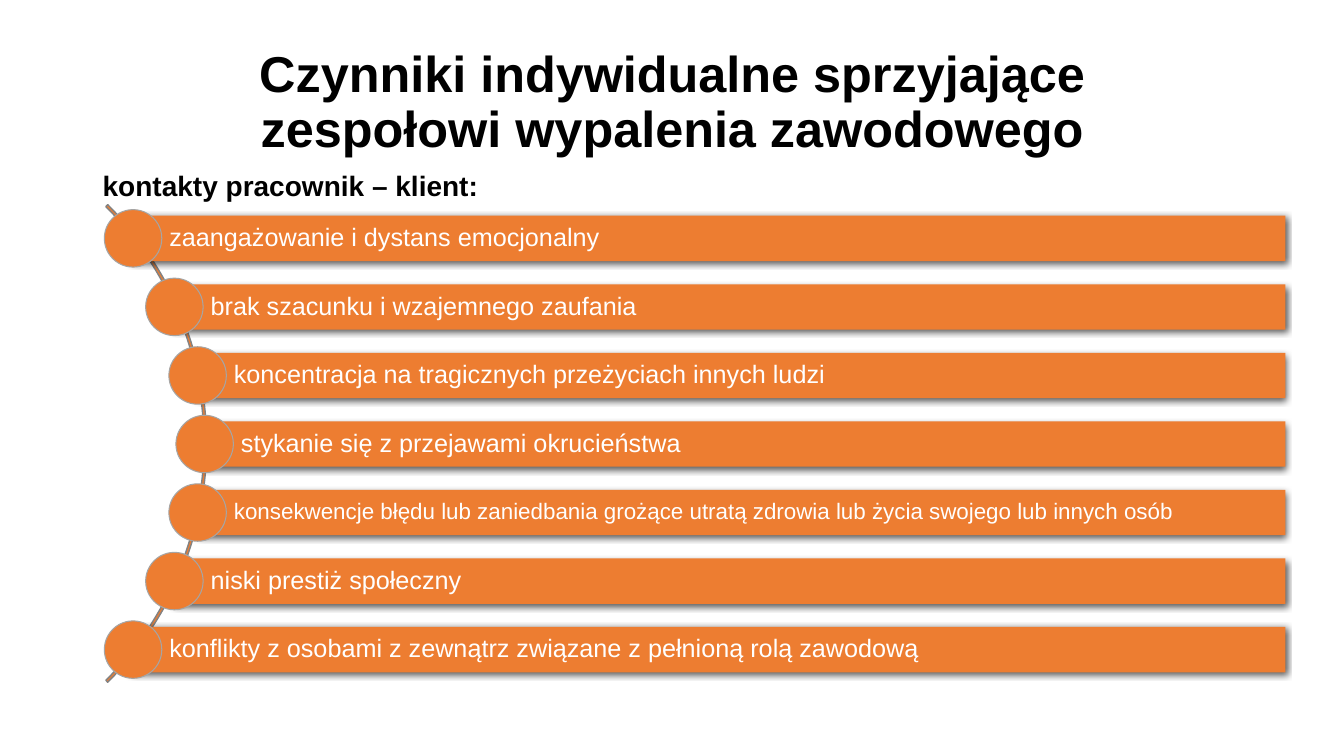
from lxml import etree
from pptx import Presentation
from pptx.dml.color import RGBColor
from pptx.enum.shapes import MSO_SHAPE
from pptx.enum.text import MSO_ANCHOR, PP_ALIGN
from pptx.oxml import parse_xml
from pptx.util import Inches, Pt

ARC, BAR, CIRCLE = MSO_SHAPE.BLOCK_ARC, MSO_SHAPE.RECTANGLE, MSO_SHAPE.OVAL
LEFT, CENTER = PP_ALIGN.LEFT, PP_ALIGN.CENTER
TOP, MIDDLE = MSO_ANCHOR.TOP, MSO_ANCHOR.MIDDLE
ORANGE, WHITE, BLACK = "ED7D31", "FFFFFF", "000000"

BAR_SHADOW = """
<a:effectLst xmlns:a="http://schemas.openxmlformats.org/drawingml/2006/main">
  <a:outerShdw blurRad="57150" dist="19050" dir="5400000" algn="ctr" rotWithShape="0">
    <a:srgbClr val="000000"><a:alpha val="63000"/></a:srgbClr>
  </a:outerShdw>
</a:effectLst>"""

presentation = Presentation()
presentation.slide_width = Inches(13.33)
presentation.slide_height = Inches(7.5)
slide = presentation.slides.add_slide(presentation.slide_layouts[6])


def add_orange_shape(kind, left, top, width, height, line=None, line_width=0.75):
    shape = slide.shapes.add_shape(
        kind, Inches(left), Inches(top), Inches(width), Inches(height))
    shape.shadow.inherit = False
    shape.fill.solid()
    shape.fill.fore_color.rgb = RGBColor.from_string(ORANGE)
    if line:
        shape.line.color.rgb = RGBColor.from_string(line)
        shape.line.width = Pt(line_width)
    else:
        shape.line.fill.background()
    return shape


def write_text(shape, text, size, color=BLACK, bold=False, align=LEFT,
               anchor=MIDDLE, spacing=0.9, inset=0.1, right_inset=0.1):
    frame = shape.text_frame
    frame.word_wrap = True
    frame.vertical_anchor = anchor
    frame.margin_left, frame.margin_right = Inches(inset), Inches(right_inset)
    frame.margin_top = frame.margin_bottom = Inches(0.05)
    paragraph = frame.paragraphs[0]
    paragraph.alignment = align
    paragraph.line_spacing = spacing
    for number, line in enumerate(text.split("\n")):
        if number:
            paragraph.add_line_break()
        run = paragraph.add_run()
        run.text = line
        run.font.name = "Arial"
        run.font.size = Pt(size)
        run.font.bold = bold
        run.font.color.rgb = RGBColor.from_string(color)


# Arc behind the list
arc = add_orange_shape(ARC, -4.65, 1.05, 6.7, 6.7, line="828282", line_width=1)
for index, value in enumerate((189, 27, 0.004)):
    arc.adjustments[index] = value

# Bars, each starting at the centre of its circle
factors = [
    (1.32, "zaangażowanie i dystans emocjonalny", 18),
    (1.73, "brak szacunku i wzajemnego zaufania", 18),
    (1.96, "koncentracja na tragicznych przeżyciach innych ludzi", 18),
    (2.03, "stykanie się z przejawami okrucieństwa", 18),
    (1.96, "konsekwencje błędu lub zaniedbania grożące utratą zdrowia "
           "lub życia swojego lub innych osób", 16),
    (1.73, "niski prestiż społeczny", 18),
    (1.32, "konflikty z osobami z zewnątrz związane z pełnioną rolą zawodową", 18),
]
FIRST_TOP, ROW_STEP, BAR_HEIGHT = 2.14, 0.68, 0.45
BARS_RIGHT, DIAMETER = 12.75, 0.57

for row, (left, text, size) in enumerate(factors):
    top = FIRST_TOP + row * ROW_STEP
    bar = add_orange_shape(BAR, left, top, BARS_RIGHT - left, BAR_HEIGHT)
    properties = bar.fill._xPr
    properties.replace(properties.find("{*}effectLst"),
                       parse_xml(etree.tostring(etree.fromstring(BAR_SHADOW))))
    write_text(bar, text, size, color=WHITE, inset=0.36, right_inset=0.05)
    add_orange_shape(CIRCLE, left - DIAMETER / 2,
                     top + (BAR_HEIGHT - DIAMETER) / 2,
                     DIAMETER, DIAMETER, line="A5A5A5")

# Headings
subtitle = slide.shapes.add_textbox(
    Inches(0.92), Inches(1.62), Inches(12.1), Inches(0.51))
write_text(subtitle, "kontakty pracownik – klient:", 20, bold=True,
           anchor=TOP, spacing=1.0)

title = slide.shapes.add_textbox(
    Inches(0.92), Inches(0.35), Inches(11.5), Inches(1.36))
write_text(title, "Czynniki indywidualne sprzyjające\nzespołowi wypalenia zawodowego",
           36, bold=True, align=CENTER)

presentation.save("out.pptx")
